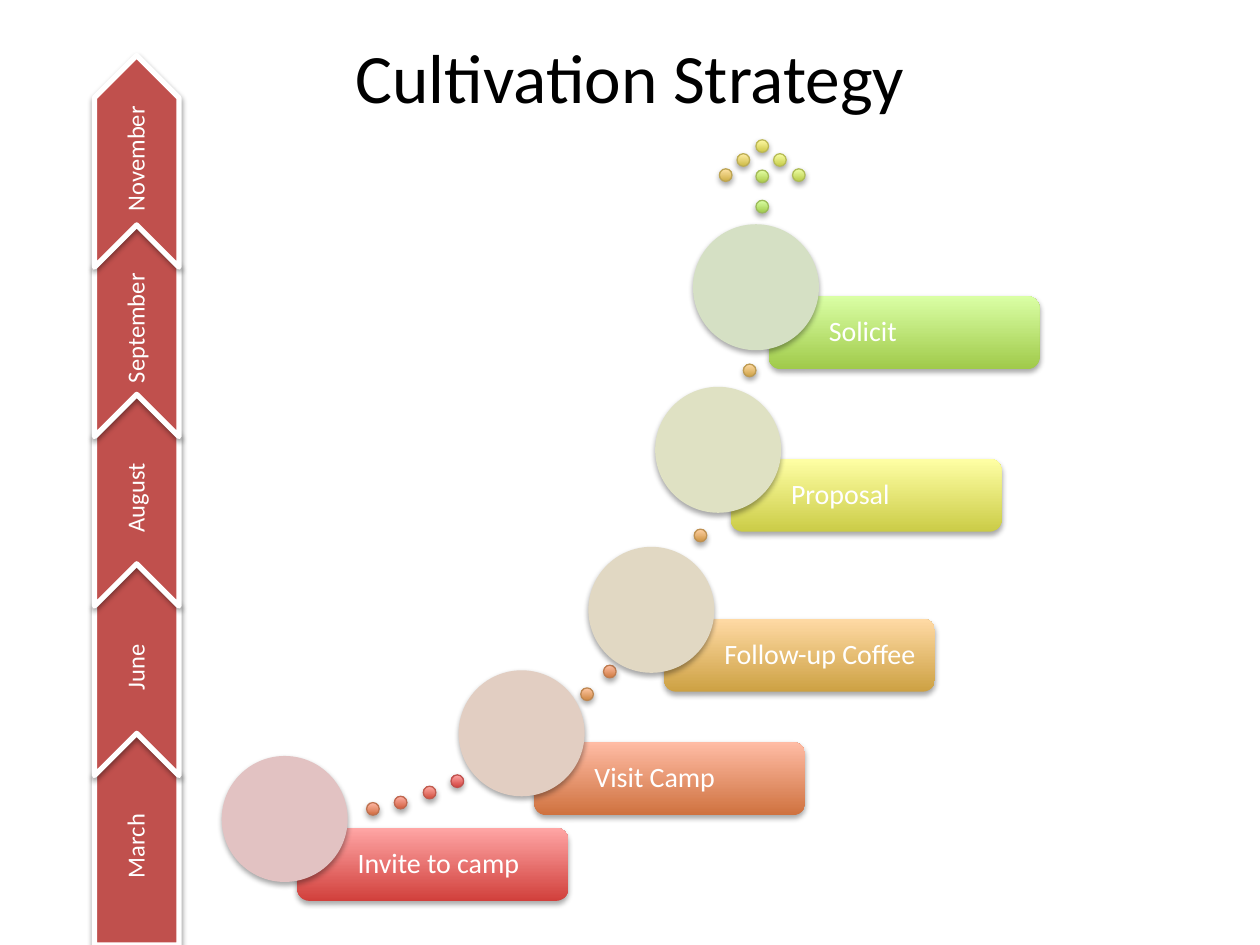
from lxml.etree import SubElement
from pptx import Presentation
from pptx.dml.color import RGBColor as RGB
from pptx.enum.shapes import MSO_SHAPE as Shape
from pptx.enum.text import MSO_ANCHOR as Anchor, MSO_AUTO_SIZE as Fit, PP_ALIGN as Align
from pptx.oxml.ns import qn
from pptx.util import Inches, Pt

COLORS = {"ink": "000000", "text": "FFFFFF", "edge": "FFFFFF", "month": "C0504D", "shade": "000000"}
FONTS = {
    "title": {"name": "Calibri", "size": Pt(39.6)},
    "step": {"name": "Calibri", "size": Pt(16)},
    "month": {"name": "Calibri", "size": Pt(14)},
}
MONTHS = ["March", "June", "August", "September", "November"]
STEPS = [
    ("Invite to camp", 0, 4.89, "E2C2C2", "D1403C", "FFA6A5"),
    ("Visit Camp", 1.88, 4.21, "E2CEC2", "CF723F", "FFBCA5"),
    ("Follow-up Coffee", 2.91, 3.23, "E1D8C3", "CDA143", "FFDAA5"),
    ("Proposal", 3.44, 1.96, "DFE1C3", "CBCC47", "FFFFA5"),
    ("Solicit", 3.74, 0.67, "D5E0C4", "A0CA4A", "DAFFA5"),
]
DOTS = [
    (1.82, 5.04, "D1403C", "FFA6A5", "C0504D"),
    (1.6, 5.13, "D14E3D", "FFABA5", "C05B4E"),
    (1.37, 5.21, "D05D3E", "FFB1A5", "BF674F"),
    (1.15, 5.26, "D06B3F", "FFB8A5", "BF7250"),
    (3.03, 4.17, "CF7940", "FFC0A5", "BF7C50"),
    (2.85, 4.35, "CE8641", "FFC8A5", "BE8751"),
    (3.75, 3.09, "CE9442", "FFD1A5", "BE9152"),
    (4.14, 1.78, "CDA143", "FFDAA5", "BD9B53"),
    (3.95, 0.23, "CDAD44", "FFE4A5", "BDA554"),
    (4.09, 0.11, "CCBA45", "FFEEA5", "BDAE55"),
    (4.24, 0, "CCC646", "FFFAA5", "BCB856"),
    (4.38, 0.11, "C5CB47", "F9FFA5", "B7BC56"),
    (4.53, 0.23, "B8CB48", "EEFFA5", "AEBC57"),
    (4.24, 0.24, "ACCA49", "E4FFA5", "A4BB58"),
    (4.24, 0.48, "A0CA4A", "DAFFA5", "9BBB59"),
]


def shade(shape, dist, alpha):
    """Give a shape a soft shadow that falls straight down."""
    shape.shadow.inherit = False
    effects = shape._element.spPr.find(qn("a:effectLst"))
    outer = SubElement(effects, qn("a:outerShdw"), blurRad=str(Pt(3.15)), dist=str(Pt(dist)),
                       dir="5400000", rotWithShape="0")
    color = SubElement(outer, qn("a:srgbClr"), val=COLORS["shade"])
    SubElement(color, qn("a:alpha"), val=str(alpha * 1000))


def draw(shapes, kind, box, fill, line=None, width=0.75, dist=1.8, alpha=35):
    """Add a shape with a flat fill, or a fade from the low tone to the high one."""
    shape = shapes.add_shape(kind, *map(Inches, box))
    if isinstance(fill, str):
        shape.fill.solid()
        shape.fill.fore_color.rgb = RGB.from_string(fill)
    else:
        shape.fill.gradient()
        shape.fill.gradient_angle = 90
        for stop, tone in zip(shape.fill.gradient_stops, fill):
            stop.color.rgb = RGB.from_string(tone)
    if line:
        shape.line.color.rgb = RGB.from_string(line)
        shape.line.width = Pt(width)
    else:
        shape.line.fill.background()
    shade(shape, dist, alpha)
    return shape


def write(shape, text, font, color, align, pads=(0, 0, 0, 0), wrap=True):
    """Fill a shape with one formatted paragraph."""
    frame = shape.text_frame
    sides = ("margin_left", "margin_top", "margin_right", "margin_bottom")
    values = dict(zip(sides, map(Inches, pads)))
    values.update(auto_size=Fit.NONE, vertical_anchor=Anchor.MIDDLE, word_wrap=wrap)
    for key, value in values.items():
        setattr(frame, key, value)
    line = frame.paragraphs[0]
    line.alignment = align
    line.line_spacing = 0.9
    run = line.add_run()
    run.text = text
    for key, value in FONTS[font].items():
        setattr(run.font, key, value)
    run.font.color.rgb = RGB.from_string(COLORS[color])


def add_title(slide, box):
    """Place the slide title."""
    title = slide.shapes.title
    for key, value in zip(("left", "top", "width", "height"), box):
        setattr(title, key, Inches(value))
    write(title, "Cultivation Strategy", "title", "ink", Align.CENTER)


def add_climb(slide, left, top):
    """Place the dotted climb with its labelled steps."""
    shapes = slide.shapes.add_group_shape().shapes
    for x, y, low, high, line in DOTS:
        draw(shapes, Shape.OVAL, (left + x, top + y, 0.1, 0.1), (low, high), line)
    for text, x, y, disc, low, high in STEPS:
        x, y = left + x, top + y
        card = draw(shapes, Shape.ROUNDED_RECTANGLE, (x + 0.6, y + 0.57, 2.15, 0.58), (low, high))
        write(card, text, "step", "text", Align.LEFT, (0.45, 0.07, 0.07, 0.07))
        draw(shapes, Shape.OVAL, (x, y, 1, 1), disc)


def add_months(slide, left, top, width, height):
    """Stack the months upward as arrows that overlap by one tip."""
    shapes = slide.shapes.add_group_shape().shapes
    tip = width / 2
    step = (height - tip) / len(MONTHS)
    long = step + tip
    for i, month in enumerate(MONTHS):
        y = top + height - long - i * step
        box = (left + (width - long) / 2, y + (long - width) / 2, long, width)
        kind = Shape.CHEVRON if i else Shape.PENTAGON
        arrow = draw(shapes, kind, box, COLORS["month"], COLORS["edge"], 3, 1.6, 38)
        arrow.rotation = 270
        pads = (0.06, 0.04, 0.02, 0.04) if i else (0.08, 0.04, 0.02, 0.04)
        write(arrow, month, "month", "text", Align.CENTER, pads, False)


def main():
    """Build the slide and save it."""
    deck = Presentation()
    deck.slide_width, deck.slide_height = Inches(10), Inches(7.5)
    slide = deck.slides.add_slide(deck.slide_layouts[5])
    add_title(slide, (0.5, 0.3, 9, 0.69))
    add_climb(slide, 1.76, 1.11)
    add_months(slide, 0.75, 0.44, 0.67, 7.06)
    deck.save("out.pptx")


if __name__ == "__main__":
    main()
